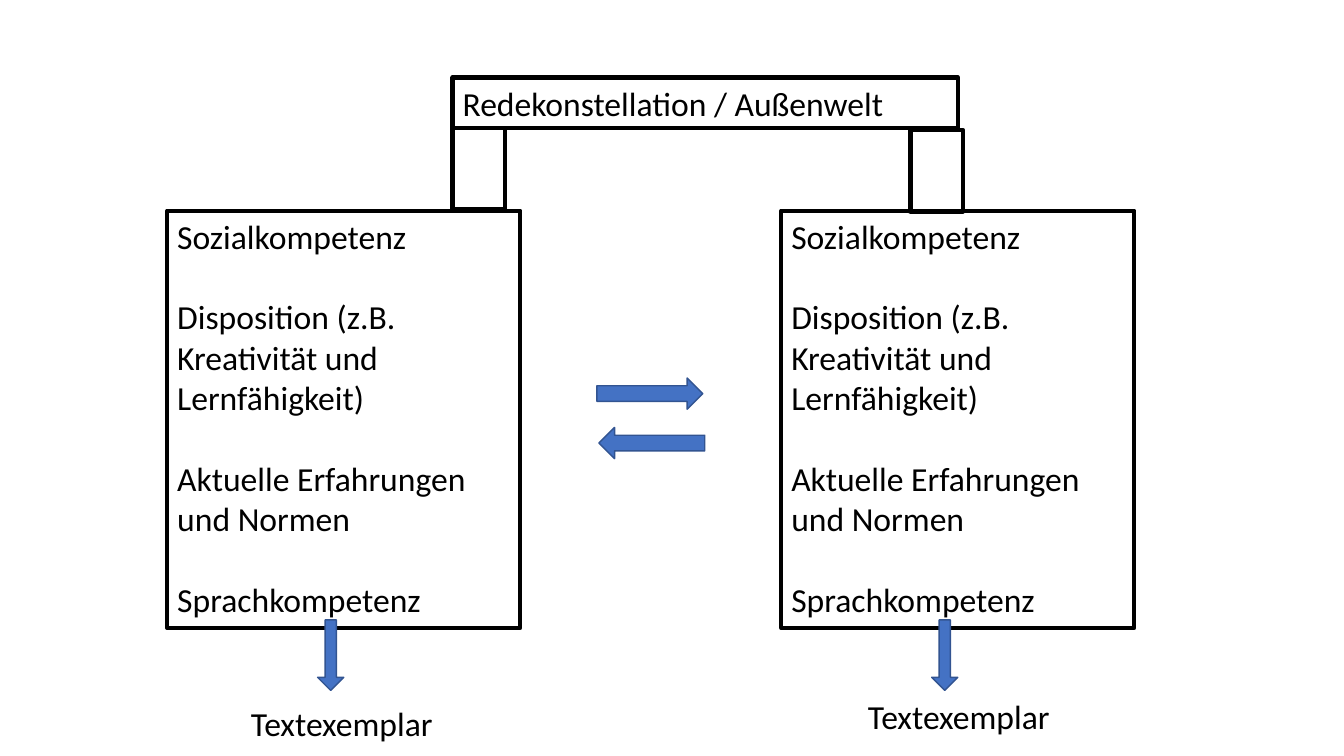
from pptx import Presentation, util as u
from pptx.dml.color import RGBColor
from pptx.enum import shapes, text

BLACK = RGBColor(0x00, 0x00, 0x00)
BLUE = RGBColor(0x44, 0x72, 0xC4)
DARK_BLUE = RGBColor(0x32, 0x54, 0x91)

HEADING = "Redekonstellation / Außenwelt"
COMPETENCES = [
    "Sozialkompetenz",
    "Disposition (z.B. Kreativität und Lernfähigkeit)",
    "Aktuelle Erfahrungen und Normen",
    "Sprachkompetenz",
]
RESULT = "Textexemplar"

BOX_TOP, BOX_WIDTH, BOX_HEIGHT = 2.09, 3.5, 4.14
POST_WIDTH, POST_HEIGHT = 0.52, 0.81
SPEAKERS = [
    {"left": 1.66, "post": (4.49, 1.27), "result": (2.39, 6.92)},
    {"left": 7.75, "post": (9.03, 1.29), "result": (8.51, 6.85)},
]
EXCHANGE_ARROWS = [(5.92, 3.75, 0), (5.94, 4.24, 180)]
PARAGRAPH_GAP = 28.8


def write(shape, lines):
    frame = shape.text_frame
    frame.text = "\n".join(lines)
    settings = {
        "word_wrap": True,
        "auto_size": text.MSO_AUTO_SIZE.NONE,
        "vertical_anchor": text.MSO_ANCHOR.TOP,
    }
    for name, value in settings.items():
        setattr(frame, name, value)
    for index, paragraph in enumerate(frame.paragraphs):
        paragraph.alignment = text.PP_ALIGN.LEFT
        paragraph.space_before = u.Pt(PARAGRAPH_GAP if index else 0)
        for name, value in {"name": "Calibri", "size": u.Pt(24)}.items():
            setattr(paragraph.font, name, value)
        paragraph.font.color.rgb = BLACK


def add_shape(slide, kind, area, line, width, fill=None):
    shape = slide.shapes.add_shape(kind, *map(u.Inches, area))
    shape.shadow.inherit = False
    if fill is None:
        shape.fill.background()
    else:
        shape.fill.solid()
        shape.fill.fore_color.rgb = fill
    shape.line.color.rgb = line
    shape.line.width = u.Pt(width)
    return shape


def add_box(slide, area, width, lines=()):
    box = add_shape(slide, shapes.MSO_SHAPE.RECTANGLE, area, BLACK, width)
    if lines:
        write(box, lines)


def add_arrow(slide, area, rotation):
    arrow = add_shape(slide, shapes.MSO_SHAPE.RIGHT_ARROW, area, DARK_BLUE, 1, BLUE)
    arrow.rotation = rotation
    return arrow


def main():
    presentation = Presentation()
    presentation.slide_width = u.Inches(13.33)
    presentation.slide_height = u.Inches(7.5)
    slide = presentation.slides.add_slide(presentation.slide_layouts[6])

    for speaker in SPEAKERS:
        left = speaker["left"]
        add_box(slide, (left, BOX_TOP, BOX_WIDTH, BOX_HEIGHT), 3, COMPETENCES)
        arrow = add_arrow(slide, (left + 1.27, 6.37, 0.7, 0.26), 90)
        arrow.adjustments[0] = 0.43
        label_area = (*speaker["result"], 2.53, 0.5)
        label = slide.shapes.add_textbox(*map(u.Inches, label_area))
        write(label, [RESULT])

    for left, top, rotation in EXCHANGE_ARROWS:
        add_arrow(slide, (left, top, 1.05, 0.31), rotation)

    add_box(slide, (4.49, 0.77, 5.01, 0.5), 3.25, [HEADING])
    for speaker in SPEAKERS:
        add_box(slide, (*speaker["post"], POST_WIDTH, POST_HEIGHT), 3.25)

    presentation.save("out.pptx")


if __name__ == "__main__":
    main()
